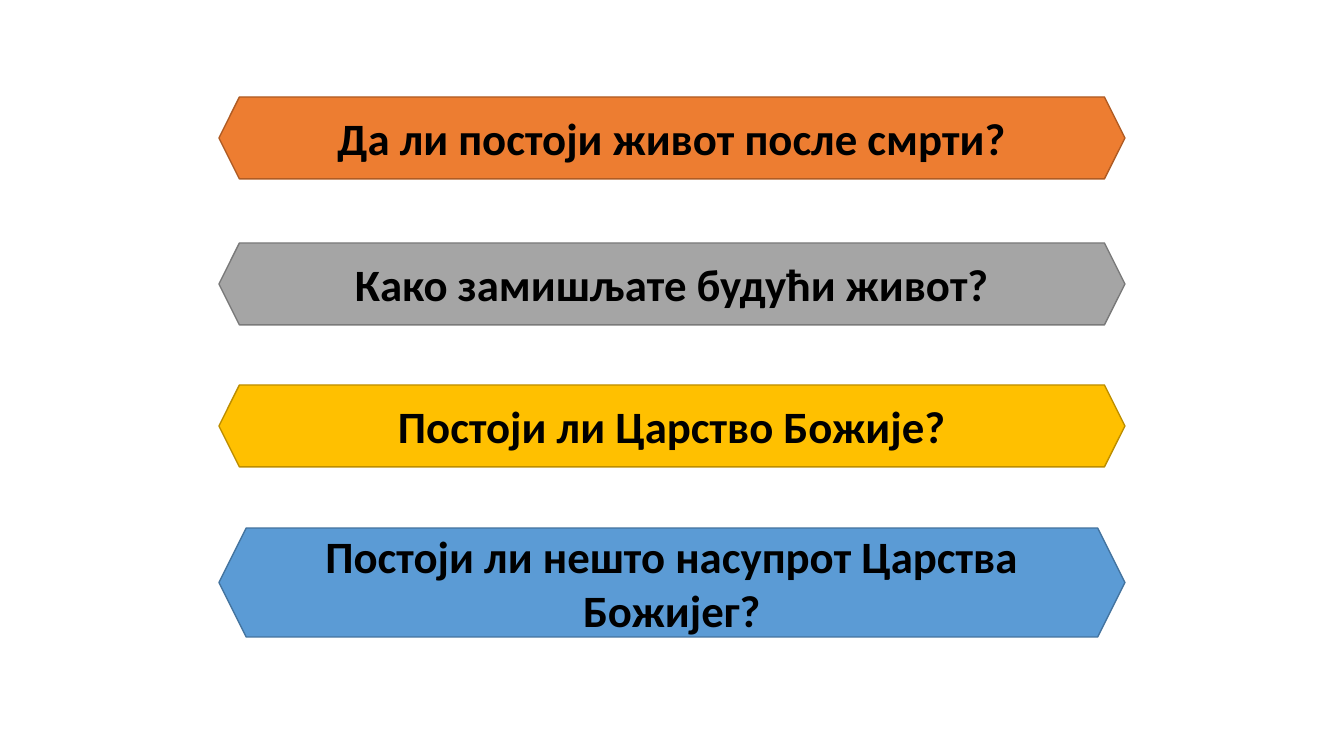
from dataclasses import dataclass

from pptx import Presentation
from pptx.dml.color import RGBColor
from pptx.enum.shapes import MSO_SHAPE
from pptx.enum.text import MSO_ANCHOR, PP_ALIGN
from pptx.util import Emu, Pt


@dataclass(frozen=True)
class Theme:
    font: str = "Calibri"
    question_size: int = 32
    line_width: int = 1
    text: str = "000000"
    orange: tuple = ("ED7D31", "AF5C24")
    gray: tuple = ("A5A5A5", "7A7A7A")
    gold: tuple = ("FFC000", "BD8E00")
    blue: tuple = ("5B9BD5", "43739E")


THEME = Theme()
PX_PER_INCH = 100.8
PAGE_WIDTH, PAGE_HEIGHT = 1344, 756
BANNER_LEFT, BANNER_WIDTH = 219, 906

QUESTIONS = [
    ("Да ли постоји живот после смрти?", 97, 82, THEME.orange),
    ("Како замишљате будући живот?", 243, 82, THEME.gray),
    ("Постоји ли Царство Божије?", 385, 82, THEME.gold),
    ("Постоји ли нешто насупрот Царства Божијег?", 528, 109, THEME.blue),
]


def px(length):
    return Emu(round(length * 914400 / PX_PER_INCH))


def write_question(box, question):
    frame = box.text_frame
    frame.word_wrap = True
    frame.vertical_anchor = MSO_ANCHOR.MIDDLE
    para = frame.paragraphs[0]
    para.alignment = PP_ALIGN.CENTER
    span = para.add_run()
    span.text = question
    span.font.name = THEME.font
    span.font.size = Pt(THEME.question_size)
    span.font.bold = True
    span.font.color.rgb = RGBColor.from_string(THEME.text)


def add_banner(page, question, top, height, colours):
    fill, outline = colours
    box = page.shapes.add_shape(
        MSO_SHAPE.HEXAGON, px(BANNER_LEFT), px(top), px(BANNER_WIDTH), px(height)
    )
    box.shadow.inherit = False
    box.fill.solid()
    box.fill.fore_color.rgb = RGBColor.from_string(fill)
    box.line.color.rgb = RGBColor.from_string(outline)
    box.line.width = Pt(THEME.line_width)
    write_question(box, question)


def main():
    deck = Presentation()
    deck.slide_width = px(PAGE_WIDTH)
    deck.slide_height = px(PAGE_HEIGHT)
    page = deck.slides.add_slide(deck.slide_layouts[6])
    for question, top, height, colours in QUESTIONS:
        add_banner(page, question, top, height, colours)
    deck.save("out.pptx")


if __name__ == "__main__":
    main()
